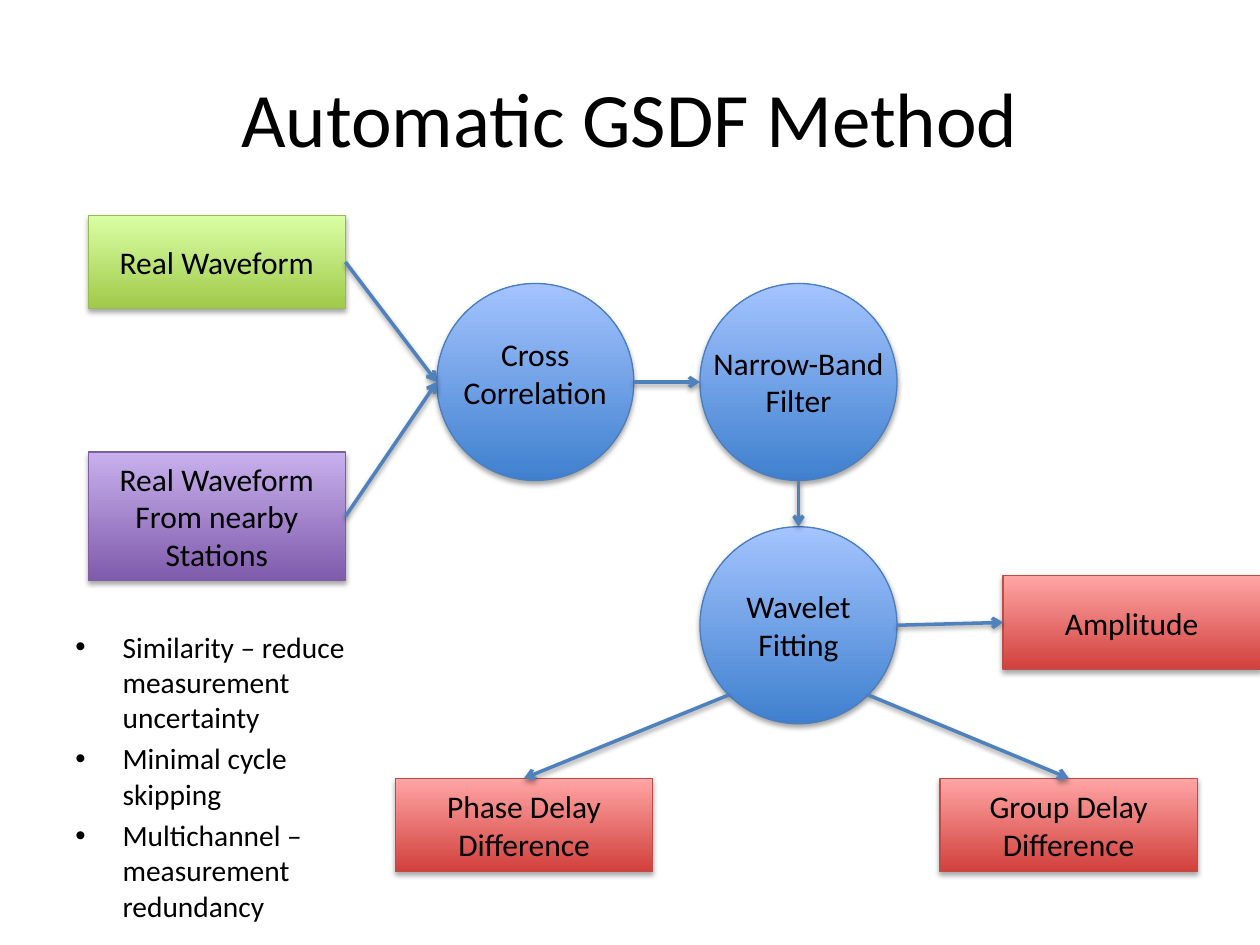
"""Build the Automatic GSDF Method flow chart slide."""
import math

import pptx
import pptx.dml.color
import pptx.enum.shapes
import pptx.enum.text
import pptx.oxml
import pptx.util
from lxml import etree

Pt = pptx.util.Pt
RGBColor = pptx.dml.color.RGBColor
SHAPE = pptx.enum.shapes.MSO_SHAPE
ALIGN = pptx.enum.text.PP_ALIGN
ANCHOR = pptx.enum.text.MSO_ANCHOR

FONT = "Calibri"
BLACK = RGBColor(0x00, 0x00, 0x00)
ARROW = RGBColor(0x4F, 0x81, 0xBD)
GREEN = (RGBColor(0xA0, 0xCA, 0x4A), RGBColor(0xDA, 0xFF, 0xA5), RGBColor(0x98, 0xB9, 0x55))
PURPLE = (RGBColor(0x7F, 0x5B, 0xAB), RGBColor(0xC8, 0xB0, 0xED), RGBColor(0x7D, 0x60, 0xA0))
BLUE = (RGBColor(0x3F, 0x80, 0xCE), RGBColor(0xA4, 0xC4, 0xFF), RGBColor(0x4B, 0x7E, 0xBC))
RED = (RGBColor(0xD1, 0x40, 0x3C), RGBColor(0xFF, 0xA6, 0xA5), RGBColor(0xBF, 0x4C, 0x48))

TITLE = "Automatic GSDF Method"
BULLETS = [
    "Similarity – reduce measurement uncertainty",
    "Minimal cycle skipping",
    "Multichannel – measurement redundancy",
]
BOX_W, BOX_H = 147, 53.4
BOXES = {
    "waveform": (["Real Waveform"], 50.4, 123, BOX_H, GREEN),
    "nearby": (["Real Waveform", "From nearby Stations"], 50.4, 258.3, 73.6, PURPLE),
    "phase": (["Phase Delay", "Difference"], 226, 444.7, BOX_H, RED),
    "group": (["Group Delay", "Difference"], 537.2, 444.7, BOX_H, RED),
    "amplitude": (["Amplitude"], 573.2, 329, BOX_H, RED),
}
DIAMETER, LABEL_H = 112.6, 51
CIRCLES = {
    "correlation": (["Cross", "Correlation"], 305.9, 218.3, -4.7),
    "filter": (["Narrow-Band", "Filter"], 456.3, 218.3, 0),
    "wavelet": (["Wavelet", "Fitting"], 456.3, 357.3, 0),
}
TOP, LEFT, RIGHT = 0, 1, 3
ARROWS = [
    (("waveform", RIGHT), ("correlation", 180)),
    (("nearby", RIGHT), ("correlation", 180)),
    (("correlation", 0), ("filter", 180)),
    (("filter", 90), ("wavelet", 270)),
    (("wavelet", 135), ("phase", TOP)),
    (("wavelet", 45), ("group", TOP)),
    (("wavelet", 0), ("amplitude", LEFT)),
]


def add_shadow(sp, dist, opacity):
    ns = "http://schemas.openxmlformats.org/drawingml/2006/main"
    sp._element.spPr.append(pptx.oxml.parse_xml(
        f'<a:effectLst xmlns:a="{ns}"><a:outerShdw blurRad="{Pt(3.1)}" dist="{Pt(dist)}" '
        f'dir="5400000" rotWithShape="0"><a:srgbClr val="000000">'
        f'<a:alpha val="{opacity * 1000}"/></a:srgbClr></a:outerShdw></a:effectLst>'))


def write(tf, lines, size, align=ALIGN.CENTER):
    for i, line in enumerate(lines):
        p = tf.paragraphs[0] if i == 0 else tf.add_paragraph()
        p.alignment = align
        r = p.add_run()
        r.text = line
        r.font.name, r.font.size = FONT, Pt(size)
        r.font.color.rgb = BLACK


def add_node(s, kind, x, y, w, h, colors):
    dark, light, edge = colors
    sp = s.shapes.add_shape(kind, Pt(x), Pt(y), Pt(w), Pt(h))
    sp.fill.gradient()
    sp.fill.gradient_angle = 90
    for stop, color in zip(sp.fill.gradient_stops, (dark, light)):
        stop.color.rgb = color
    sp.line.color.rgb, sp.line.width = edge, Pt(0.75)
    add_shadow(sp, 1.8, 35)
    return sp


def add_circle(s, lines, cx, cy, shift):
    x = cx - DIAMETER / 2
    add_node(s, SHAPE.OVAL, x, cy - DIAMETER / 2, DIAMETER, DIAMETER, BLUE)
    label = s.shapes.add_textbox(
        Pt(x), Pt(cy - LABEL_H / 2 + shift), Pt(DIAMETER), Pt(LABEL_H))
    label.text_frame.word_wrap = False
    write(label.text_frame, lines, 18)


def rim_point(name, degrees):
    _, cx, cy, _ = CIRCLES[name]
    angle = math.radians(degrees)
    return (Pt(cx + DIAMETER / 2 * math.cos(angle)),
            Pt(cy + DIAMETER / 2 * math.sin(angle)))


def add_arrow(s, boxes, start, end):
    points = [(0, 0) if name in boxes else rim_point(name, site) for name, site in (start, end)]
    c = s.shapes.add_connector(
        pptx.enum.shapes.MSO_CONNECTOR.STRAIGHT, *points[0], *points[1])
    for (name, site), connect in ((start, c.begin_connect), (end, c.end_connect)):
        if name in boxes:
            connect(boxes[name], site)
    c.line.color.rgb, c.line.width = ARROW, Pt(2)
    ln = c.line._get_or_add_ln()
    etree.SubElement(ln, pptx.oxml.ns.qn("a:tailEnd"), type="arrow")
    add_shadow(c, 1.6, 38)


def add_bullets(s):
    tf = s.shapes.add_textbox(Pt(36), Pt(355.7), Pt(175), Pt(157.7)).text_frame
    tf.word_wrap = True
    write(tf, BULLETS, 16.8, ALIGN.LEFT)
    for p in tf.paragraphs:
        p.space_before = Pt(3.4)
        pPr = p._p.get_or_add_pPr()
        pPr.set("marL", str(Pt(27)))
        pPr.set("indent", str(-Pt(27)))
        etree.SubElement(pPr, pptx.oxml.ns.qn("a:buFont"), typeface="Arial")
        etree.SubElement(pPr, pptx.oxml.ns.qn("a:buChar"), char="•")


def main():
    prs = pptx.Presentation()
    prs.slide_width, prs.slide_height = Pt(720), Pt(540)
    s = prs.slides.add_slide(prs.slide_layouts[5])

    title = s.shapes.title
    title.left, title.top, title.width, title.height = Pt(36), Pt(21.6), Pt(648), Pt(90)
    title.text_frame.vertical_anchor = ANCHOR.MIDDLE
    write(title.text_frame, [TITLE], 44)
    add_bullets(s)

    boxes = {}
    for name, (lines, x, y, h, colors) in BOXES.items():
        sp = boxes[name] = add_node(s, SHAPE.RECTANGLE, x, y, BOX_W, h, colors)
        sp.text_frame.vertical_anchor = ANCHOR.MIDDLE
        write(sp.text_frame, lines, 18)
    for circle in CIRCLES.values():
        add_circle(s, *circle)
    for start, end in ARROWS:
        add_arrow(s, boxes, start, end)

    prs.save("out.pptx")


if __name__ == "__main__":
    main()
